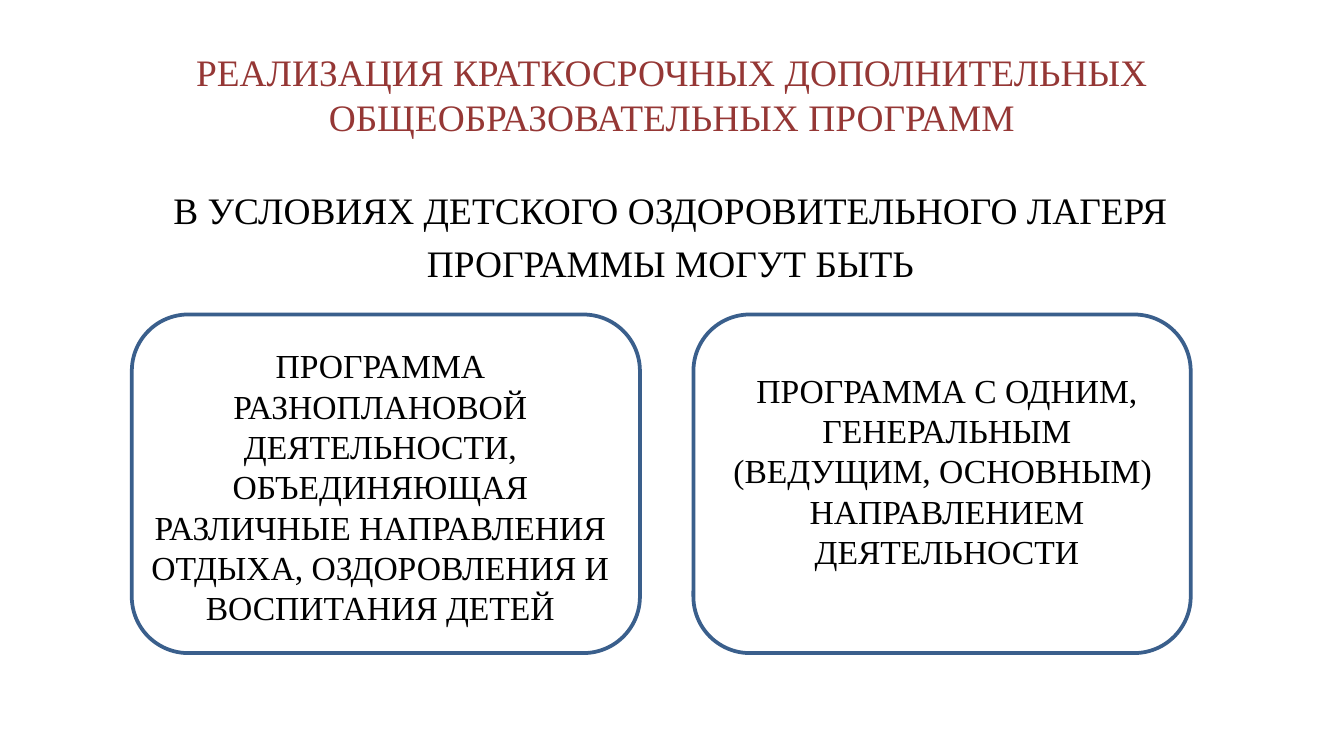
from dataclasses import dataclass

from pptx import Presentation
from pptx.dml.color import RGBColor
from pptx.enum.shapes import MSO_SHAPE
from pptx.enum.text import MSO_ANCHOR, PP_ALIGN
from pptx.util import Pt

ROUNDED = MSO_SHAPE.ROUNDED_RECTANGLE
CENTER = PP_ALIGN.CENTER
TOP, MIDDLE = MSO_ANCHOR.TOP, MSO_ANCHOR.MIDDLE

FONT = "Times New Roman"
COLORS = {"title": "953735", "text": "000000", "border": "3A5F8C"}
CARD_TOP, CARD_HEIGHT = 168.5, 181.4


@dataclass
class Box:
    left: float
    top: float
    width: float
    height: float


@dataclass
class TextBlock:
    box: Box
    lines: list[str]
    size: float
    color: str = "text"
    anchor: MSO_ANCHOR = TOP
    gap: float = 0


@dataclass
class Card:
    left: float
    width: float
    text: TextBlock


TITLE = TextBlock(
    Box(36, 16.6, 648, 67.7),
    ["РЕАЛИЗАЦИЯ КРАТКОСРОЧНЫХ ДОПОЛНИТЕЛЬНЫХ ОБЩЕОБРАЗОВАТЕЛЬНЫХ ПРОГРАММ"],
    20, "title", MIDDLE)
INTRO = TextBlock(
    Box(35.3, 96.5, 648, 62),
    ["В УСЛОВИЯХ ДЕТСКОГО ОЗДОРОВИТЕЛЬНОГО ЛАГЕРЯ", "ПРОГРАММЫ МОГУТ БЫТЬ"],
    20, gap=4.8)
CARDS = [
    Card(70.6, 272.2, TextBlock(
        Box(70.6, 181.4, 266.4, 136.8),
        ["ПРОГРАММА РАЗНОПЛАНОВОЙ ДЕЯТЕЛЬНОСТИ, ОБЪЕДИНЯЮЩАЯ РАЗЛИЧНЫЕ "
         "НАПРАВЛЕНИЯ ОТДЫХА, ОЗДОРОВЛЕНИЯ И ВОСПИТАНИЯ ДЕТЕЙ"], 18)),
    Card(371.5, 266.4, TextBlock(
        Box(376.6, 194.4, 261.4, 106.6),
        ["ПРОГРАММА С ОДНИМ, ГЕНЕРАЛЬНЫМ", "(ВЕДУЩИМ, ОСНОВНЫМ) ",
         "НАПРАВЛЕНИЕМ ДЕЯТЕЛЬНОСТИ"], 18)),
]


def rgb(name: str) -> RGBColor:
    return RGBColor.from_string(COLORS[name])


def add_text(s, block: TextBlock) -> None:
    b = block.box
    sp = s.shapes.add_textbox(Pt(b.left), Pt(b.top), Pt(b.width), Pt(b.height))
    tf = sp.text_frame
    tf.word_wrap = True
    tf.vertical_anchor = block.anchor
    for i, line in enumerate(block.lines):
        p = tf.add_paragraph() if i else tf.paragraphs[0]
        p.alignment = CENTER
        if i:
            p.space_before = Pt(block.gap)
        r = p.add_run()
        r.text = line
        r.font.name = FONT
        r.font.size = Pt(block.size)
        r.font.color.rgb = rgb(block.color)


def add_card(s, card: Card) -> None:
    sp = s.shapes.add_shape(
        ROUNDED, Pt(card.left), Pt(CARD_TOP), Pt(card.width), Pt(CARD_HEIGHT))
    sp.shadow.inherit = False
    sp.fill.background()
    sp.line.color.rgb = rgb("border")
    sp.line.width = Pt(2)
    add_text(s, card.text)


def main() -> None:
    prs = Presentation()
    prs.slide_width, prs.slide_height = Pt(720), Pt(405)
    s = prs.slides.add_slide(prs.slide_layouts[6])
    add_text(s, TITLE)
    add_text(s, INTRO)
    for card in CARDS:
        add_card(s, card)
    prs.save("out.pptx")


if __name__ == "__main__":
    main()
